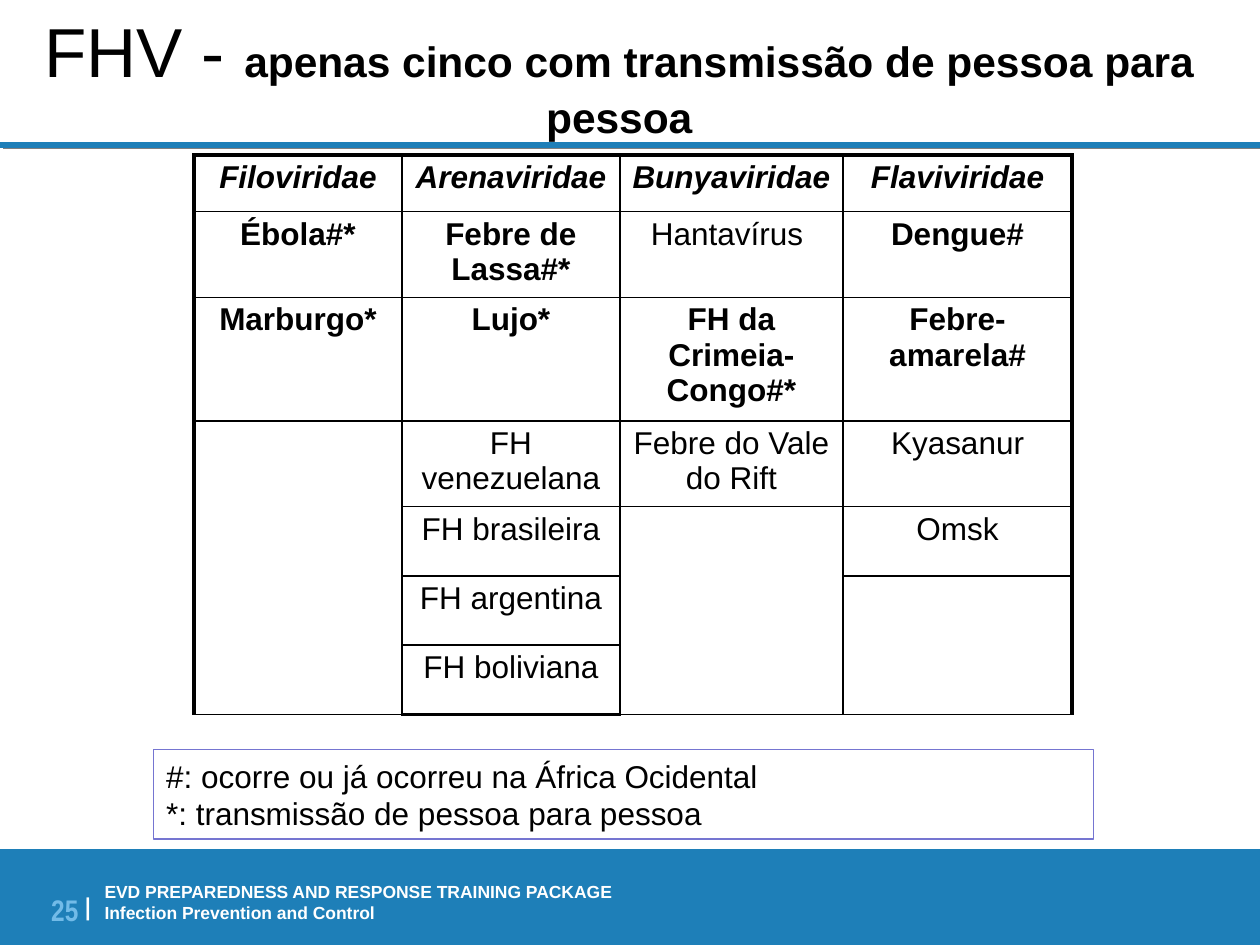
from lxml.etree import SubElement
from pptx import Presentation
from pptx.dml.color import RGBColor
from pptx.enum.shapes import MSO_CONNECTOR, MSO_SHAPE
from pptx.enum.text import MSO_ANCHOR, MSO_AUTO_SIZE, PP_ALIGN as Align
from pptx.oxml import parse_xml
from pptx.oxml.ns import nsdecls, qn
from pptx.util import Inches, Pt

COLORS = {"blue": "1E7FB8", "sky": "72BBE8", "violet": "7575D1",
          "black": "000000", "white": "FFFFFF", "gray": "808080"}

COLUMN_WIDTHS = [1.65, 1.73, 1.77, 1.82]
ROW_HEIGHTS = [0.45, 0.67, 0.91, 0.67, 0.55, 0.55, 0.55]
VIRUS_FAMILIES = {
    "Filoviridae": ["Ébola#*", "Marburgo*"],
    "Arenaviridae": ["Febre de Lassa#*", "Lujo*", "FH venezuelana",
                     "FH brasileira", "FH argentina", "FH boliviana"],
    "Bunyaviridae": ["Hantavírus ", "FH da Crimeia-Congo#*", "Febre do Vale do Rift"],
    "Flaviviridae": ["Dengue#", "Febre-amarela#", "Kyasanur", "Omsk"],
}


def rgb(name):
    return RGBColor.from_string(COLORS[name])


def style_font(font, size, color="black", bold=False, italic=False, face="Arial"):
    font.name, font.size = face, Pt(size)
    font.bold, font.italic = bold, italic
    font.color.rgb = rgb(color)


def add_borders(cell, widths):
    """Draw the left, right, top and bottom borders, widths in points."""
    properties = cell._tc.get_or_add_tcPr()
    for index, (side, width) in enumerate(zip("LRTB", widths)):
        properties.insert(index, parse_xml(
            f'<a:ln{side} {nsdecls("a")} w="{Pt(width)}"><a:solidFill>'
            f'<a:srgbClr val="{COLORS["black"]}"/></a:solidFill></a:ln{side}>'))


class SlideBuilder:
    def __init__(self, slide):
        self.slide = slide
        self.shapes = slide.shapes

    def rule(self, y):
        """Full-width line with a short hard shadow."""
        line = self.shapes.add_connector(
            MSO_CONNECTOR.STRAIGHT, 0, Inches(y), Inches(10), Inches(y))
        line.line.color.rgb = rgb("blue")
        line.line.width = Pt(3)
        effects = SubElement(line._element.spPr, qn("a:effectLst"))
        shadow = SubElement(effects, qn("a:outerShdw"), dist=str(Pt(2.2)),
                            dir=str(27 * 60000))
        SubElement(shadow, qn("a:srgbClr"), val=COLORS["gray"])

    def box(self, left, top, width, height, fill=None, outline=None):
        shape = self.shapes.add_shape(MSO_SHAPE.RECTANGLE, Inches(left), Inches(top),
                                      Inches(width), Inches(height))
        shape.shadow.inherit = False
        if fill:
            shape.fill.solid()
            shape.fill.fore_color.rgb = rgb(fill)
        else:
            shape.fill.background()
        if outline:
            shape.line.color.rgb = rgb(outline)
            shape.line.width = Pt(0.75)
        else:
            shape.line.fill.background()
        return shape

    def label(self, left, top, width, height):
        """Empty text box without insets."""
        frame = self.shapes.add_textbox(Inches(left), Inches(top), Inches(width),
                                        Inches(height)).text_frame
        frame.word_wrap = True
        frame.margin_left = frame.margin_right = 0
        frame.margin_top = frame.margin_bottom = 0
        return frame

    def lines(self, frame, texts, **style):
        frame.text = "\n".join(texts)
        for paragraph in frame.paragraphs:
            paragraph.alignment = Align.LEFT
            style_font(paragraph.font, **style)

    def title(self, lead, rest):
        title = self.shapes.title
        title.left, title.top = Inches(0.25), Inches(0.25)
        title.width, title.height = Inches(9.33), Inches(0.69)
        frame = title.text_frame
        frame.word_wrap = True
        frame.auto_size = MSO_AUTO_SIZE.NONE
        frame.vertical_anchor = MSO_ANCHOR.MIDDLE
        paragraph = frame.paragraphs[0]
        paragraph.alignment = Align.CENTER
        for text, size, bold in ((lead, 39.6, False), (rest, 24.3, True)):
            run = paragraph.add_run()
            run.text = text
            style_font(run.font, size, bold=bold)

    def page_number(self, number):
        paragraph = self.label(0.27, 6.98, 0.45, 0.4).paragraphs[0]
        paragraph.alignment = Align.RIGHT
        for text, size, color in ((f"{number} ", 17, "sky"), ("|", 24, "white")):
            run = paragraph.add_run()
            run.text = text
            style_font(run.font, size, color, bold=True, face="Arial Narrow")
        run._r.get_or_add_rPr().set("baseline", "14000")

    def family_table(self, left, top, families):
        """One column per family; the cells below its last virus are merged."""
        table = self.shapes.add_table(
            len(ROW_HEIGHTS), len(COLUMN_WIDTHS), Inches(left), Inches(top),
            Inches(sum(COLUMN_WIDTHS)), Inches(sum(ROW_HEIGHTS))).table
        table.first_row = table.horz_banding = False
        for column, width in zip(table.columns, COLUMN_WIDTHS):
            column.width = Inches(width)
        for row, height in zip(table.rows, ROW_HEIGHTS):
            row.height = Inches(height)
        last_row, last_column = len(ROW_HEIGHTS) - 1, len(COLUMN_WIDTHS) - 1
        for c, (family, viruses) in enumerate(families.items()):
            texts = [family, *viruses]
            for r in range(last_row + 1):
                cell = table.cell(r, c)
                if r < len(texts):
                    self.table_text(cell, texts[r], header=r == 0)
                cell.fill.solid()
                cell.fill.fore_color.rgb = rgb("white")
                on_edge = (c == 0, c == last_column, r == 0, r == last_row)
                add_borders(cell, [2.25 if edge else 1 for edge in on_edge])
            if len(texts) < last_row:
                table.cell(len(texts), c).merge(table.cell(last_row, c))

    def table_text(self, cell, text, header):
        cell.margin_left = cell.margin_right = Inches(0.07)
        cell.margin_top = cell.margin_bottom = Inches(0.04)
        cell.text = text
        paragraph = cell.text_frame.paragraphs[0]
        paragraph.alignment = Align.CENTER
        marked = text.endswith(("#", "*"))
        style_font(paragraph.font, 18, bold=header or marked, italic=header)


def main():
    deck = Presentation()
    deck.slide_width, deck.slide_height = Inches(10), Inches(7.5)
    builder = SlideBuilder(deck.slides.add_slide(deck.slide_layouts[5]))

    builder.rule(1.15)
    builder.box(0, 6.74, 10, 0.76, fill="blue")
    builder.lines(builder.label(0.83, 6.99, 7.4, 0.37),
                  ["EVD PREPAREDNESS AND RESPONSE TRAINING PACKAGE",
                   "Infection Prevention and Control"],
                  size=10, color="white", bold=True)
    builder.page_number(25)

    builder.title("FHV - ", "apenas cinco com transmissão de pessoa para pessoa")
    builder.family_table(1.54, 1.23, VIRUS_FAMILIES)
    legend = builder.box(1.22, 5.95, 7.46, 0.71, outline="violet")
    builder.lines(legend.text_frame,
                  ["#: ocorre ou já ocorreu na África Ocidental",
                   "*: transmissão de pessoa para pessoa"], size=18)

    deck.save("out.pptx")


if __name__ == "__main__":
    main()
